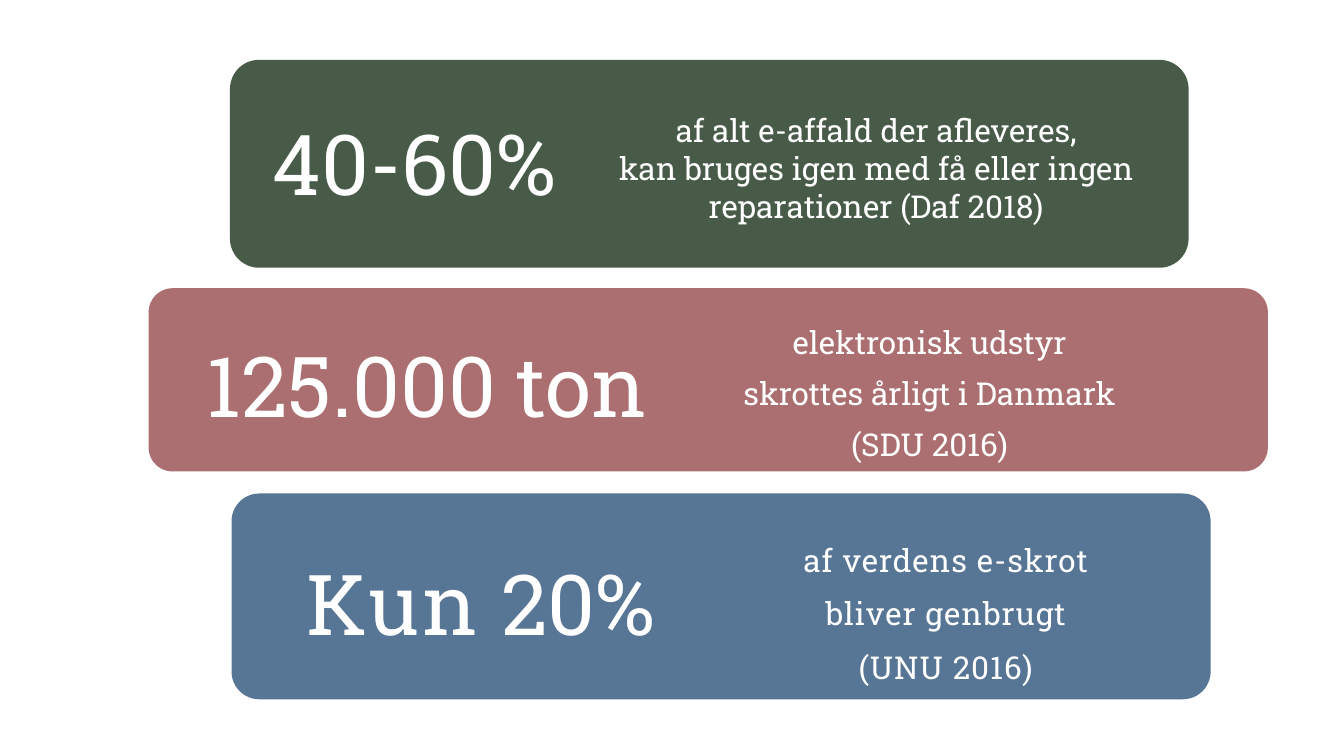
from pptx import Presentation
from pptx.dml.color import RGBColor
from pptx.enum.shapes import MSO_SHAPE as Shape
from pptx.enum.text import MSO_ANCHOR as Anchor, PP_ALIGN as Align
from pptx.oxml.ns import qn
from pptx.oxml.xmlchemy import OxmlElement
from pptx.util import Emu, Pt

FONT = "Roboto Slab"
WHITE = "FFFFFF"
FIGURE_SIZE, CAPTION_SIZE = 120, 45
FIGURE_LEADING = 163


def px(count):
    return Emu(count * 9525)


def color(value):
    return RGBColor.from_string(value)


def add_banner(slide, frame, fill, corner):
    """Add a rounded banner with a fill of 80 % opacity."""
    banner = slide.shapes.add_shape(Shape.ROUNDED_RECTANGLE, *map(px, frame))
    banner.adjustments[0] = corner
    banner.shadow.inherit = False
    banner.line.fill.background()
    banner.fill.solid()
    banner.fill.fore_color.rgb = color(fill)
    alpha = OxmlElement("a:alpha")
    alpha.set("val", "80000")
    banner._element.spPr.find(".//" + qn("a:srgbClr")).append(alpha)


def add_text(slide, frame, paragraphs, size, leading=None):
    """Add centred text; each paragraph is a list of (text, letter spacing in points)."""
    box = slide.shapes.add_textbox(*map(px, frame))
    body = box.text_frame
    body.word_wrap = True
    body.vertical_anchor = Anchor.MIDDLE
    body.margin_left = body.margin_right = body.margin_top = body.margin_bottom = px(2)
    for index, pieces in enumerate(paragraphs):
        para = body.add_paragraph() if index else body.paragraphs[0]
        para.alignment = Align.CENTER
        if leading:
            para.line_spacing = Pt(leading)
        for text, spacing in pieces:
            span = para.add_run()
            span.text = text
            span.font.name = FONT
            span.font.size = Pt(size)
            span.font.color.rgb = color(WHITE)
            if spacing:
                span._r.get_or_add_rPr().set("spc", str(round(spacing * 100)))


def add_figure(slide, frame, pieces):
    add_text(slide, frame, [pieces], FIGURE_SIZE, FIGURE_LEADING)


def add_caption(slide, frame, lines, leading=None, spacing=0):
    add_text(slide, frame, [[(line, spacing)] for line in lines], CAPTION_SIZE, leading)


def main():
    deck = Presentation()
    deck.slide_width, deck.slide_height = px(2560), px(1440)
    slide = deck.slides.add_slide(deck.slide_layouts[6])

    add_banner(slide, (441, 940, 1865, 392), "2E537A", 0.135)
    add_caption(slide, (1274, 979, 1055, 349),
                ["af verdens e-skrot", "bliver genbrugt", "(UNU 2016)"], 76, 1.4)
    add_figure(slide, (500, 998, 832, 272), [("Kun", 3.6), (" 20%", 0)])

    add_banner(slide, (283, 549, 2132, 349), "974C4E", 0.131)
    add_figure(slide, (347, 594, 933, 249), [("125.000 ton", 0)])
    add_caption(slide, (1188, 571, 1165, 329),
                ["elektronisk udstyr", "skrottes årligt i Danmark", "(SDU 2016)"], 73)

    add_banner(slide, (438, 114, 1826, 396), "1B321C", 0.14)
    add_caption(slide, (1142, 170, 1054, 300),
                ["af alt e-affald der afleveres,",
                 "kan bruges igen med få eller ingen reparationer (Daf 2018)"])
    add_figure(slide, (503, 141, 574, 308), [("40-60%", 0)])

    deck.save("out.pptx")


if __name__ == "__main__":
    main()
